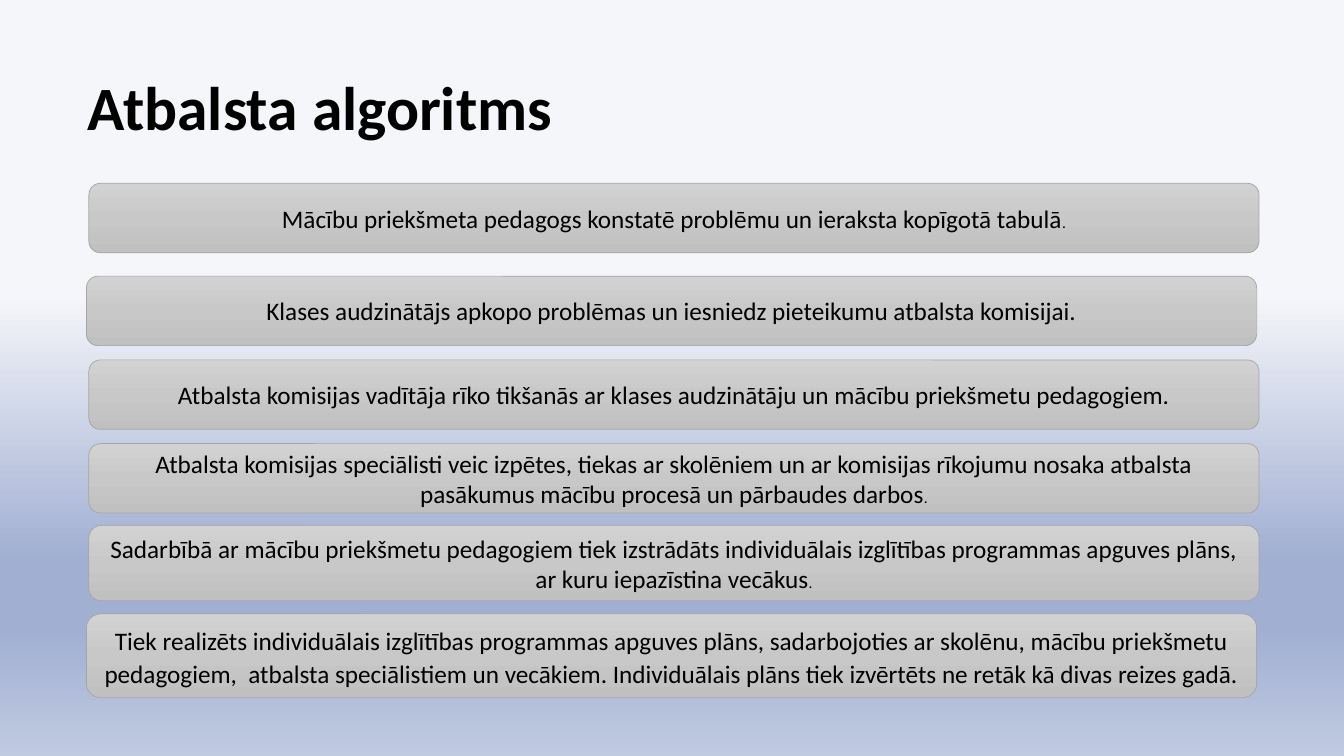
from lxml.etree import SubElement
from pptx import Presentation
from pptx.dml.color import RGBColor
from pptx.enum.shapes import MSO_SHAPE
from pptx.enum.text import MSO_ANCHOR, MSO_AUTO_SIZE, PP_ALIGN
from pptx.oxml.ns import qn
from pptx.util import Cm, Pt

COLORS = {
    "text": "000000", "border": "A5A5A5",
    "sky": "F5F6FA", "haze": "A1AFD2", "ground": "C0CAE1",
    "step_top": "D2D2D2", "step_middle": "C8C8C8", "step_bottom": "C0C0C0",
}


def write(frame, text, size=18, bold=False, align=PP_ALIGN.CENTER,
          anchor=MSO_ANCHOR.MIDDLE, line_spacing=1.0, small_end=""):
    frame.word_wrap = True
    frame.auto_size = MSO_AUTO_SIZE.NONE
    frame.vertical_anchor = anchor
    paragraph = frame.paragraphs[0]
    paragraph.alignment = align
    paragraph.line_spacing = line_spacing
    for words, points in ((text, size), (small_end, 11)):
        if words:
            run = paragraph.add_run()
            run.text = words
            run.font.name = "Calibri"
            run.font.size = Pt(points)
            run.font.bold = bold
            run.font.color.rgb = RGBColor.from_string(COLORS["text"])


def fill_downwards(fill, element, stops):
    fill.gradient()
    fill.gradient_angle = 270
    stop_list = element.find(".//" + qn("a:gsLst"))
    stop_list.clear()
    for percent, color in stops:
        stop = SubElement(stop_list, qn("a:gs"), pos=str(percent * 1000))
        SubElement(stop, qn("a:srgbClr"), val=COLORS[color])


presentation = Presentation()
presentation.slide_width = Cm(33.87)
presentation.slide_height = Cm(19.05)
slide = presentation.slides.add_slide(presentation.slide_layouts[5])

# Background
fill_downwards(slide.background.fill, slide.element, [
    (0, "sky"), (39, "sky"), (74, "haze"), (83, "haze"), (100, "ground")])

# Title
heading = slide.shapes.title
heading.left, heading.top = Cm(1.96), Cm(1.78)
heading.width, heading.height = Cm(29.97), Cm(1.96)
write(heading.text_frame, "Atbalsta algoritms", size=44, bold=True,
      align=PP_ALIGN.LEFT, anchor=MSO_ANCHOR.BOTTOM, line_spacing=0.9)

# Support steps: left, top, height, text, text format
steps = [
    (2.24, 4.62, 1.75,
     "Mācību priekšmeta pedagogs konstatē problēmu un ieraksta kopīgotā tabulā",
     {"small_end": "."}),
    (2.18, 6.96, 1.75,
     "Klases audzinātājs apkopo problēmas un iesniedz pieteikumu atbalsta komisijai.",
     {}),
    (2.24, 9.07, 1.75,
     "Atbalsta komisijas vadītāja rīko tikšanās ar klases audzinātāju un mācību "
     "priekšmetu pedagogiem.", {}),
    (2.24, 11.18, 1.75,
     "Atbalsta komisijas speciālisti veic izpētes, tiekas ar skolēniem un ar komisijas "
     "rīkojumu nosaka atbalsta pasākumus mācību procesā un pārbaudes darbos",
     {"small_end": "."}),
    (2.24, 13.24, 1.9,
     "Sadarbībā ar mācību priekšmetu pedagogiem tiek izstrādāts individuālais "
     "izglītības programmas apguves plāns, ar kuru iepazīstina vecākus",
     {"small_end": "."}),
    (2.18, 15.47, 2.11,
     "Tiek realizēts individuālais izglītības programmas apguves plāns, sadarbojoties "
     "ar skolēnu, mācību priekšmetu pedagogiem,  atbalsta speciālistiem un vecākiem. "
     "Individuālais plāns tiek izvērtēts ne retāk kā divas reizes gadā.",
     {"line_spacing": 1.07}),
]
for left, top, height, text, text_format in steps:
    step = slide.shapes.add_shape(MSO_SHAPE.ROUNDED_RECTANGLE,
                                  Cm(left), Cm(top), Cm(29.49), Cm(height))
    step.shadow.inherit = False
    fill_downwards(step.fill, step.element, [
        (0, "step_top"), (50, "step_middle"), (100, "step_bottom")])
    step.line.color.rgb = RGBColor.from_string(COLORS["border"])
    step.line.width = Pt(0.5)
    write(step.text_frame, text, **text_format)

presentation.save("out.pptx")
